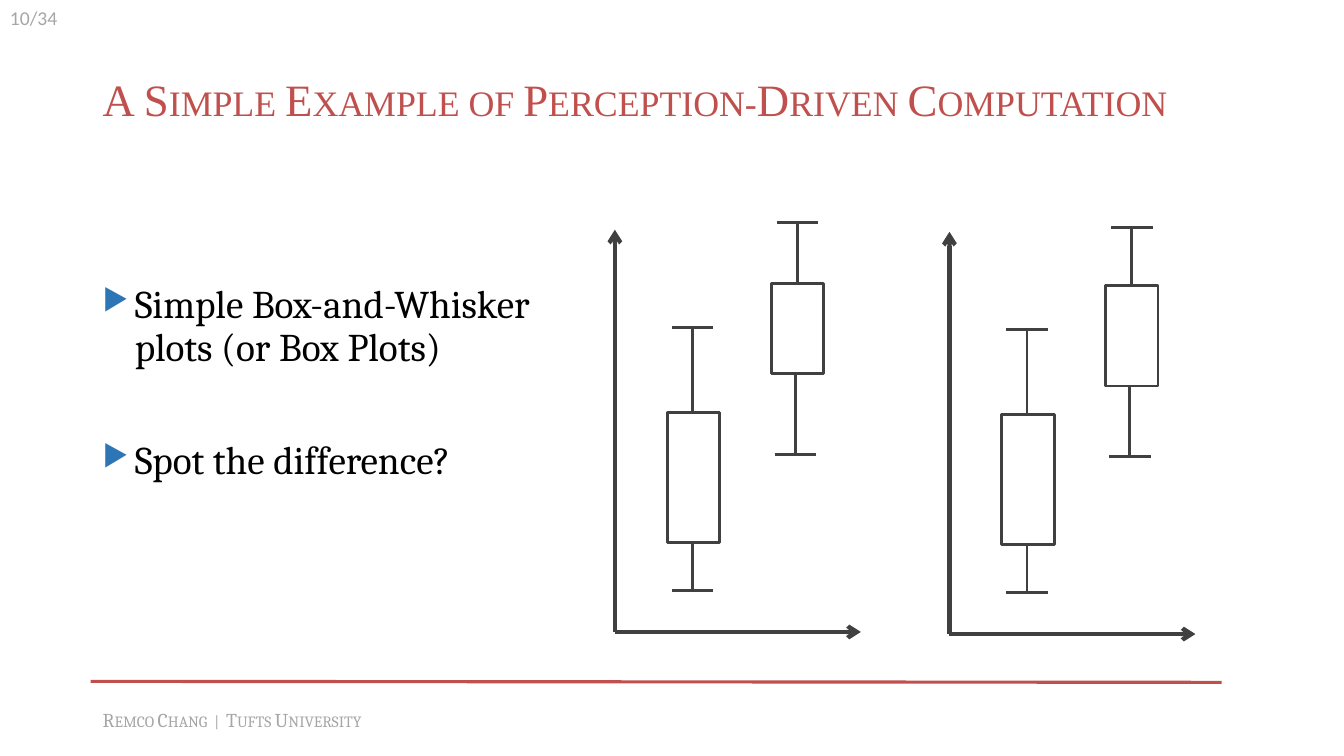
"""Builds a slide that sets two box plots side by side."""
from lxml import etree
from pptx import Presentation
from pptx.dml.color import RGBColor
from pptx.enum import shapes, text
from pptx.oxml import ns
from pptx.util import Pt

COLORS = {"accent": "C0504D", "muted": "A6A6A6", "ink": "404040",
          "body": "000000", "bullet": "2E75B6"}
TITLE = "A Simple Example of Perception-Driven Computation"
FOOTER = "Remco Chang  |  Tufts University"
PAGE = "10/34"
POINTS = ["Simple Box-and-Whisker plots (or Box Plots)", "Spot the difference?"]

LOW_GROUP = {"left": 37.4, "upper_x": 55.4, "lower_x": 55.4,
             "levels": (217.6, 157, 64.1, 29.7)}
HIGH_GROUP = {"left": 111.6, "upper_x": 130.3, "lower_x": 128.9}
PLOTS = [
    {"origin": (439.2, 451.4),
     "groups": [LOW_GROUP, {**HIGH_GROUP, "levels": (292.3, 249.1, 184.3, 126.7)}]},
    {"origin": (678.2, 452.9),
     "groups": [LOW_GROUP, {**HIGH_GROUP, "levels": (290.5, 249.1, 177.1, 126.7)}]},
]
AXIS_HEIGHT, AXIS_WIDTH = 287.3, 175.7
BOX_WIDTH, CAP_WIDTH = 37.4, 29.5
POINT_GAP, POINT_INDENT = 50.7, 23


def rgb(name):
    return RGBColor.from_string(COLORS[name])


def add_line(slide, start, end, color="ink", weight=2, arrow=False):
    line = slide.shapes.add_connector(
        shapes.MSO_CONNECTOR.STRAIGHT, *(Pt(v) for v in (*start, *end)))
    line.line.color.rgb = rgb(color)
    line.line.width = Pt(weight)
    if arrow:
        etree.SubElement(line.line._get_or_add_ln(), ns.qn("a:tailEnd"), type="arrow")
    etree.SubElement(line._element.spPr, ns.qn("a:effectLst"))


def add_text(slide, area, lines, font, size, color, small_caps=False,
             spacing=None, bulleted=False, anchor=text.MSO_ANCHOR.TOP):
    frame = slide.shapes.add_textbox(*(Pt(v) for v in area)).text_frame
    frame.word_wrap = True
    frame.vertical_anchor = anchor
    frame.text = "\n".join(lines)
    for index, paragraph in enumerate(frame.paragraphs):
        if spacing:
            paragraph.line_spacing = spacing
        if index:
            paragraph.space_before = Pt(POINT_GAP)
        if bulleted:
            add_bullet(paragraph)
        for run in paragraph.runs:
            run.font.name = font
            run.font.size = Pt(size)
            run.font.color.rgb = rgb(color)
            if small_caps:
                run.font._element.set("cap", "small")


def add_bullet(paragraph):
    properties = paragraph._p.get_or_add_pPr()
    properties.set("marL", str(Pt(POINT_INDENT)))
    properties.set("indent", str(-Pt(POINT_INDENT)))
    tint = etree.SubElement(properties, ns.qn("a:buClr"))
    etree.SubElement(tint, ns.qn("a:srgbClr"), val=COLORS["bullet"])
    etree.SubElement(properties, ns.qn("a:buSzPct"), val="75000")
    etree.SubElement(properties, ns.qn("a:buChar"), char="▶")


def add_group(slide, origin, group):
    x, y = origin
    top_cap, box_top, box_bottom, bottom_cap = (y - level for level in group["levels"])
    box = slide.shapes.add_shape(
        shapes.MSO_SHAPE.RECTANGLE, Pt(x + group["left"]), Pt(box_top),
        Pt(BOX_WIDTH), Pt(box_bottom - box_top))
    box.shadow.inherit = False
    box.fill.background()
    box.line.color.rgb = rgb("ink")
    box.line.width = Pt(2)
    for offset, edge, cap in ((group["upper_x"], box_top, top_cap),
                              (group["lower_x"], box_bottom, bottom_cap)):
        stem = x + offset
        add_line(slide, (stem, edge), (stem, cap))
        add_line(slide, (stem - CAP_WIDTH / 2, cap), (stem + CAP_WIDTH / 2, cap))


def add_plot(slide, plot):
    x, y = plot["origin"]
    for end in ((x, y - AXIS_HEIGHT), (x + AXIS_WIDTH, y)):
        add_line(slide, (x, y), end, weight=3, arrow=True)
    for group in plot["groups"]:
        add_group(slide, plot["origin"], group)


def main():
    deck = Presentation()
    deck.slide_width, deck.slide_height = Pt(960), Pt(540)
    slide = deck.slides.add_slide(deck.slide_layouts[6])
    add_line(slide, (64.8, 486.7), (872.6, 487.4), "accent", 2.25)
    add_text(slide, (66.2, 501.8, 252.7, 24.5), [FOOTER], "Cambria", 14, "muted",
             small_caps=True)
    add_text(slide, (0, 0.7, 200.2, 24.5), [PAGE], "Calibri", 14, "muted")
    add_text(slide, (66.2, 40.3, 807.8, 65.5), [TITLE], "Times New Roman", 32, "accent",
             small_caps=True, spacing=0.9, anchor=text.MSO_ANCHOR.MIDDLE)
    add_text(slide, (66.2, 200, 339.1, 281), POINTS, "Cambria", 28, "body",
             spacing=0.9, bulleted=True)
    for plot in PLOTS:
        add_plot(slide, plot)
    deck.save("out.pptx")


if __name__ == "__main__":
    main()
